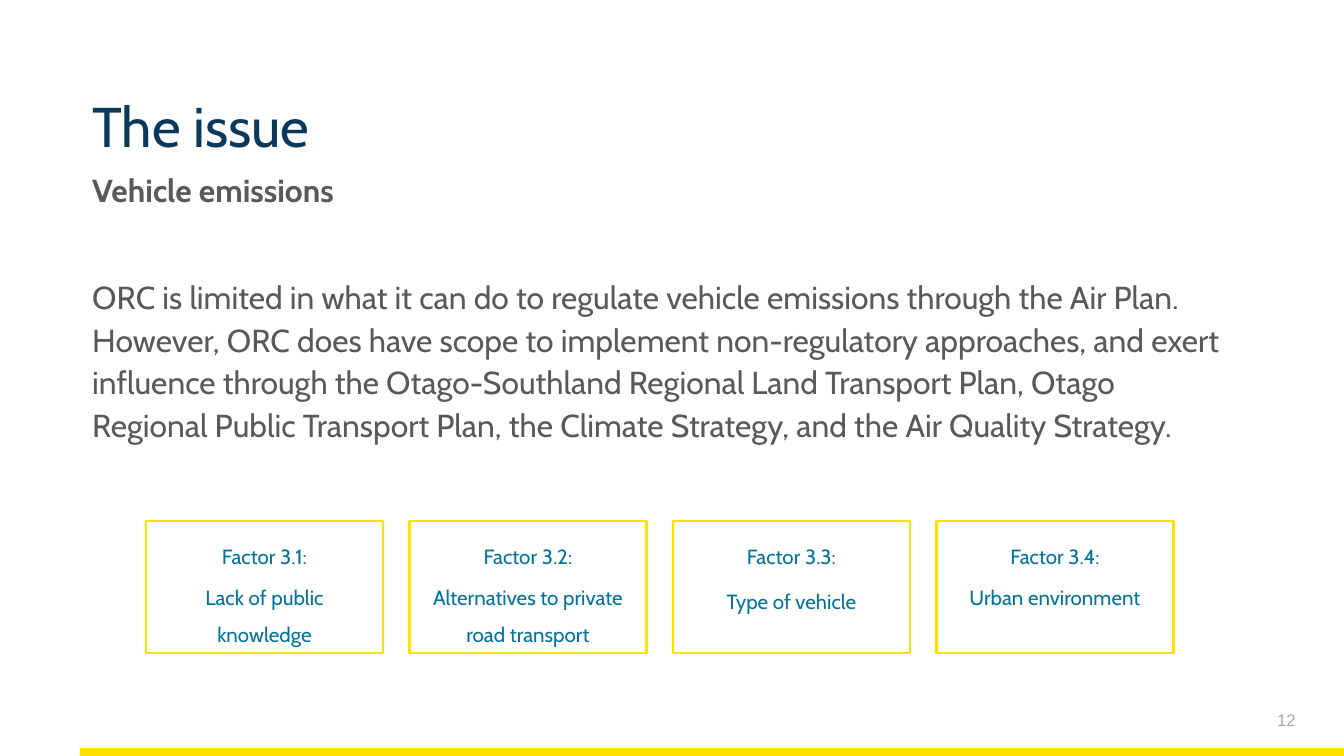
from pptx import Presentation
from pptx.dml.color import RGBColor
from pptx.enum.shapes import MSO_SHAPE
from pptx.enum.text import MSO_ANCHOR, PP_ALIGN
from pptx.util import Pt

EMU_PER_PX = 914400 / 134.4
FONT = "Cabin"
YELLOW = "FFE000"
NAVY = "0A395B"
BLUE = "0073A0"
GRAY = "595959"
LIGHT_GRAY = "A6A6A6"

LEFT, TEXT_WIDTH = 79, 1172
BOX_LEFT, BOX_TOP, BOX_WIDTH, BOX_HEIGHT = 146, 521, 237, 132
BOX_STEP = 263.5

BODY = (
    "ORC is limited in what it can do to regulate vehicle emissions through the Air Plan. "
    "However, ORC does have scope to implement non-regulatory approaches, and exert "
    "influence through the Otago-Southland Regional Land Transport Plan, Otago Regional "
    "Public Transport Plan, the Climate Strategy, and the Air Quality Strategy."
)
# Heading, description, line spacing of the description
FACTORS = [
    ("Factor 3.1:", "Lack of public knowledge", 1.5),
    ("Factor 3.2:", "Alternatives to private road transport", 1.5),
    ("Factor 3.3:", "Type of vehicle", Pt(22)),
    ("Factor 3.4:", "Urban environment", 1.5),
]


def px(length):
    return round(length * EMU_PER_PX)


def box(left, top, width, height):
    return px(left), px(top), px(width), px(height)


def color(hex_string):
    return RGBColor.from_string(hex_string)


def write(paragraph, text, size, hex_color, font=FONT, bold=False,
          align=PP_ALIGN.LEFT, spacing=1.0, after=0):
    paragraph.alignment = align
    paragraph.line_spacing = spacing
    paragraph.space_before = Pt(0)
    paragraph.space_after = Pt(after)
    run = paragraph.add_run()
    run.text = text
    run.font.name = font
    run.font.size = Pt(size)
    run.font.bold = bold
    run.font.color.rgb = color(hex_color)


def add_title(slide, text):
    title = slide.shapes.title
    title.left, title.top, title.width, title.height = box(LEFT, 102, TEXT_WIDTH, 55)
    title.text_frame.vertical_anchor = MSO_ANCHOR.MIDDLE
    write(title.text_frame.paragraphs[0], text, 30, NAVY, spacing=0.9)


def add_text(slide, bounds, text, size, hex_color, anchor=MSO_ANCHOR.TOP, **style):
    frame = slide.shapes.add_textbox(*box(*bounds)).text_frame
    frame.word_wrap = True
    frame.vertical_anchor = anchor
    write(frame.paragraphs[0], text, size, hex_color, **style)


def add_rectangle(slide, bounds, fill=None, line=None):
    shape = slide.shapes.add_shape(MSO_SHAPE.RECTANGLE, *box(*bounds))
    shape.shadow.inherit = False
    if fill:
        shape.fill.solid()
        shape.fill.fore_color.rgb = color(fill)
    else:
        shape.fill.background()
    if line:
        shape.line.color.rgb = color(line)
        shape.line.width = Pt(1.5)
    else:
        shape.line.fill.background()
    return shape


def add_factor(slide, index, heading, description, spacing):
    bounds = (BOX_LEFT + index * BOX_STEP, BOX_TOP, BOX_WIDTH, BOX_HEIGHT)
    frame = add_rectangle(slide, bounds, line=YELLOW).text_frame
    frame.word_wrap = True
    frame.vertical_anchor = MSO_ANCHOR.TOP
    style = {"align": PP_ALIGN.CENTER, "after": 2}
    write(frame.paragraphs[0], heading, 11, BLUE, spacing=Pt(22), **style)
    write(frame.add_paragraph(), description, 11, BLUE, spacing=spacing, **style)


def main():
    presentation = Presentation()
    presentation.slide_width = px(1344)
    presentation.slide_height = px(756)
    slide = presentation.slides.add_slide(presentation.slide_layouts[5])

    add_rectangle(slide, (80, 748, 1264, 8), fill=YELLOW)
    add_title(slide, "The issue")
    add_text(slide, (LEFT, 161, TEXT_WIDTH, 38), "Vehicle emissions", 17, GRAY,
             bold=True, spacing=Pt(22), after=2)
    add_text(slide, (LEFT, 266, TEXT_WIDTH, 191), BODY, 17, GRAY,
             spacing=Pt(23), after=2)
    add_text(slide, (1007, 700, 302, 40), "12", 9, LIGHT_GRAY,
             anchor=MSO_ANCHOR.MIDDLE, font="Arial", align=PP_ALIGN.RIGHT)
    for index, factor in enumerate(FACTORS):
        add_factor(slide, index, *factor)

    presentation.save("out.pptx")


if __name__ == "__main__":
    main()
